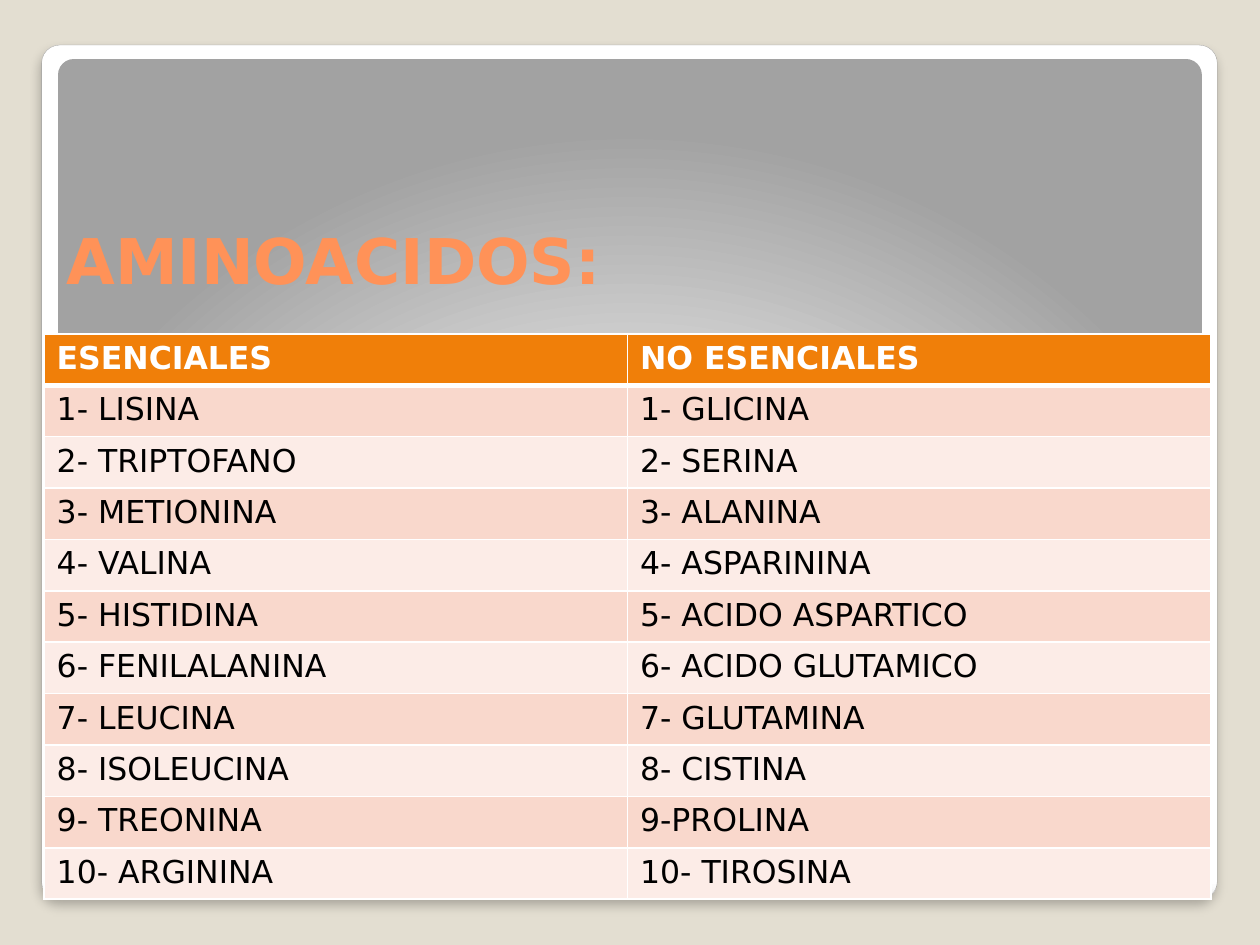
import pptx
import pptx.util
import pptx.oxml
import pptx.oxml.ns
import pptx.dml.color
import pptx.enum.shapes
import pptx.enum.text

Cm, Pt = pptx.util.Cm, pptx.util.Pt
RGBColor = pptx.dml.color.RGBColor

BEIGE = RGBColor(0xE3, 0xDE, 0xD1)
GRAY = RGBColor(0xA4, 0xA4, 0xA4)
CORAL = RGBColor(0xFF, 0x92, 0x58)
ORANGE = RGBColor(0xF0, 0x7F, 0x09)
PINK = RGBColor(0xF9, 0xD8, 0xCC)
PALE = RGBColor(0xFC, 0xEC, 0xE7)
WHITE = RGBColor(0xFF, 0xFF, 0xFF)
BLACK = RGBColor(0, 0, 0)
FONT = "DejaVu Sans"
NS = pptx.oxml.ns.nsdecls("a")

ROWS = [
    ("ESENCIALES", "NO ESENCIALES"),
    ("1- LISINA", "1- GLICINA"),
    ("2- TRIPTOFANO", "2- SERINA"),
    ("3- METIONINA", "3- ALANINA"),
    ("4- VALINA", "4- ASPARININA"),
    ("5- HISTIDINA", "5- ACIDO ASPARTICO"),
    ("6- FENILALANINA", "6- ACIDO GLUTAMICO"),
    ("7- LEUCINA", "7- GLUTAMINA"),
    ("8- ISOLEUCINA", "8- CISTINA"),
    ("9- TREONINA", "9-PROLINA"),
    ("10- ARGININA", "10- TIROSINA"),
]


def add_panel(left, top, width, height, stops, shade):
    """Add a rounded panel with gradient stops (percent, hex) and a shade element."""
    panel = slide.shapes.add_shape(
        pptx.enum.shapes.MSO_SHAPE.ROUNDED_RECTANGLE,
        Cm(left), Cm(top), Cm(width), Cm(height))
    panel.adjustments[0] = 0.021
    panel.shadow.inherit = False
    panel.line.fill.background()
    panel.fill.background()
    marks = "".join(
        f'<a:gs pos="{pos * 1000}"><a:srgbClr val="{tint}"/></a:gs>'
        for pos, tint in stops)
    grad = pptx.oxml.parse_xml(
        f'<a:gradFill {NS} rotWithShape="1"><a:gsLst>{marks}</a:gsLst>{shade}</a:gradFill>')
    props = panel._element.spPr
    props.replace(props.find(pptx.oxml.ns.qn("a:noFill")), grad)
    return panel


def add_edge(cell, side, width):
    cell._tc.get_or_add_tcPr().append(pptx.oxml.parse_xml(
        f'<a:ln{side} {NS} w="{Pt(width)}"><a:solidFill>'
        f'<a:srgbClr val="{WHITE}"/></a:solidFill></a:ln{side}>'))


deck = pptx.Presentation()
deck.slide_width, deck.slide_height = Cm(25.4), Cm(19.05)
slide = deck.slides.add_slide(deck.slide_layouts[6])
slide.background.fill.solid()
slide.background.fill.fore_color.rgb = BEIGE

# Frame and header panel
frame = add_panel(
    0.84, 0.91, 23.7, 17.22,
    [(0, "FFFFFF"), (98, "FFFFFF"), (99, "F7F7F7"), (100, "DADADA")],
    '<a:lin ang="5400000" scaled="0"/>')
frame.line.color.rgb = GRAY
frame.line.width = Pt(0.16)
frame._element.spPr.find(pptx.oxml.ns.qn("a:effectLst")).append(pptx.oxml.parse_xml(
    f'<a:outerShdw {NS} blurRad="{Pt(6)}" dist="{Pt(4)}" dir="5400000" rotWithShape="0">'
    f'<a:srgbClr val="{BLACK}"><a:alpha val="25000"/></a:srgbClr></a:outerShdw>'))
add_panel(
    1.17, 1.19, 23.06, 15.24,
    [(0, "FFFFFF"), (55, "E1E1E1"), (100, "A2A2A2")],
    '<a:path path="circle"><a:fillToRect l="50000" t="175000" r="50000" b="-75000"/></a:path>')

# Title
title = slide.shapes.add_textbox(Cm(1.09), Cm(1.52), Cm(22.73), Cm(4.6)).text_frame
title.word_wrap = True
title.vertical_anchor = pptx.enum.text.MSO_ANCHOR.BOTTOM
head = title.paragraphs[0]
head.text = "AMINOACIDOS:"
head.font.name, head.font.size, head.font.bold = FONT, Pt(36), True
head.font.color.rgb = CORAL

# Table of amino acids
table = slide.shapes.add_table(
    len(ROWS), 2, Cm(0.89), Cm(6.73), Cm(23.52), Cm(11.4)).table
for r, row in enumerate(ROWS):
    top = r == 0
    for c, text in enumerate(row):
        cell = table.cell(r, c)
        for side in "LRTB":
            thick = (top and side == "B") or (r == 1 and side == "T")
            add_edge(cell, side, 3 if thick else 1)
        cell.fill.solid()
        cell.fill.fore_color.rgb = ORANGE if top else PINK if r % 2 else PALE
        cell.text = text
        font = cell.text_frame.paragraphs[0].font
        font.name, font.size, font.bold = FONT, Pt(18), top
        font.color.rgb = WHITE if top else BLACK

deck.save("out.pptx")
